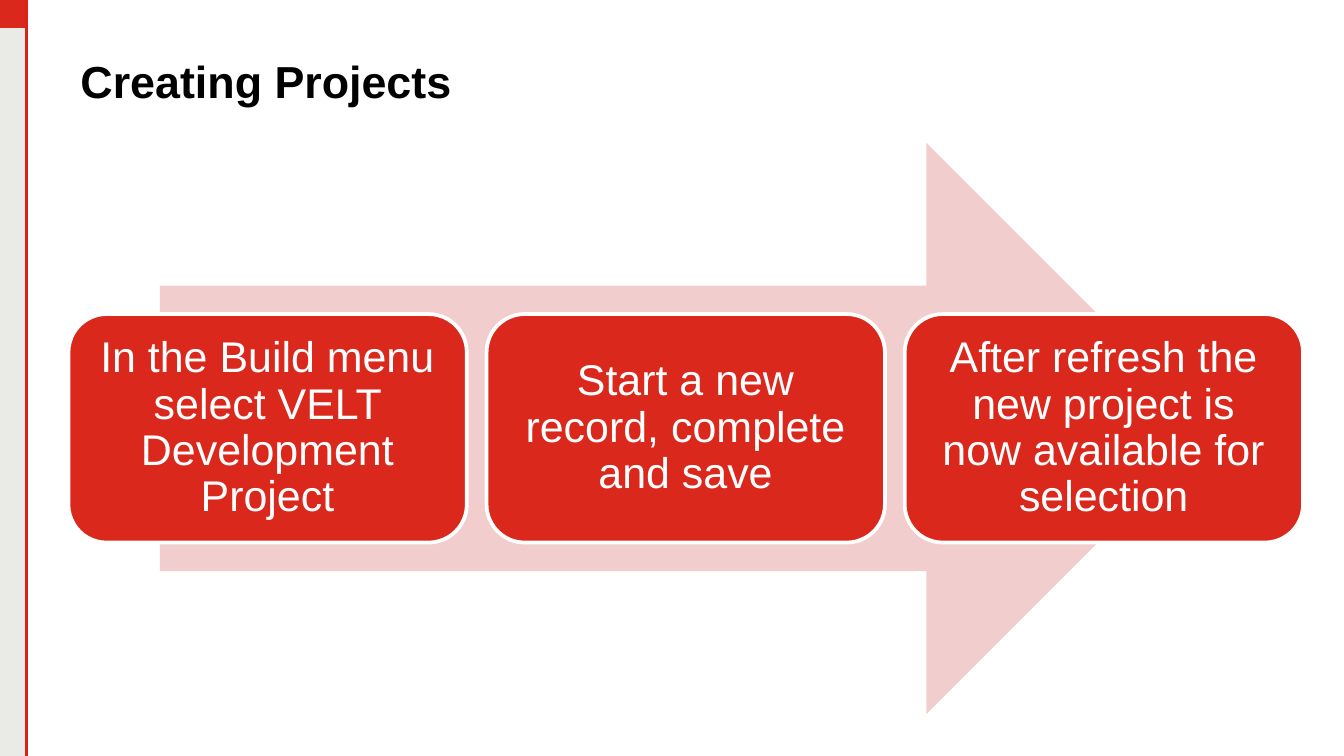
from lxml import etree
from pptx import Presentation
from pptx.dml.color import RGBColor
from pptx.enum import shapes, text
from pptx.oxml.ns import qn
from pptx.util import Pt

RED = "DA281C"


def color(hex_code):
    return RGBColor.from_string(hex_code)


def write(shape, content, size, font_color, bold=False, align=text.PP_ALIGN.LEFT,
          anchor=text.MSO_ANCHOR.TOP, spacing=1.0, inset=7.2, inset_top=7.2):
    frame = shape.text_frame
    frame.word_wrap = True
    frame.vertical_anchor = anchor
    frame.margin_left = frame.margin_right = frame.margin_bottom = Pt(inset)
    frame.margin_top = Pt(inset_top)
    paragraph = frame.paragraphs[0]
    paragraph.text = content
    paragraph.alignment = align
    paragraph.line_spacing = spacing
    paragraph.font.name = "Arial"
    paragraph.font.size = Pt(size)
    paragraph.font.bold = bold
    paragraph.font.color.rgb = color(font_color)


def add_block(kind, left, top, width, height, fill):
    shape = slide.shapes.add_shape(kind, Pt(left), Pt(top), Pt(width), Pt(height))
    shape.shadow.inherit = False
    shape.fill.solid()
    shape.fill.fore_color.rgb = color(fill)
    shape.line.fill.background()
    return shape


presentation = Presentation()
presentation.slide_width = Pt(720)
presentation.slide_height = Pt(405)
slide = presentation.slides.add_slide(presentation.slide_layouts[6])

# Left sidebar: grey band, red corner, red rule
add_block(shapes.MSO_SHAPE.RECTANGLE, 0, 0, 14.4, 405, "EAEAE6")
add_block(shapes.MSO_SHAPE.RECTANGLE, 0, 0, 15, 15, RED)
rule = slide.shapes.add_connector(
    shapes.MSO_CONNECTOR.STRAIGHT, Pt(14.4), Pt(-0.7), Pt(14.4), Pt(408))
rule.line.color.rgb = color("DA2317")
rule.line.width = Pt(1.5)
etree.SubElement(rule._element.spPr, qn("a:effectLst"))

# Title
title = slide.shapes.add_textbox(Pt(36), Pt(22.3), Pt(663), Pt(36))
write(title, "Creating Projects", 24, "000000", bold=True, inset_top=6.4)

# Background arrow
add_block(shapes.MSO_SHAPE.RIGHT_ARROW, 85.7, 76.5, 563.6, 306, "F1CDCD")

# Process steps
steps = [
    "In the Build menu select VELT Development Project",
    "Start a new record, complete and save",
    "After refresh the new project is now available for selection",
]
first_left, step_pitch = 36.7, 224
for index, step in enumerate(steps):
    box = add_block(shapes.MSO_SHAPE.ROUNDED_RECTANGLE,
                    first_left + index * step_pitch, 168.3, 213.4, 122.4, RED)
    box.line.color.rgb = color("FFFFFF")
    box.line.width = Pt(2)
    write(box, step, 23, "FFFFFF", align=text.PP_ALIGN.CENTER,
          anchor=text.MSO_ANCHOR.MIDDLE, spacing=0.9)

presentation.save("out.pptx")
